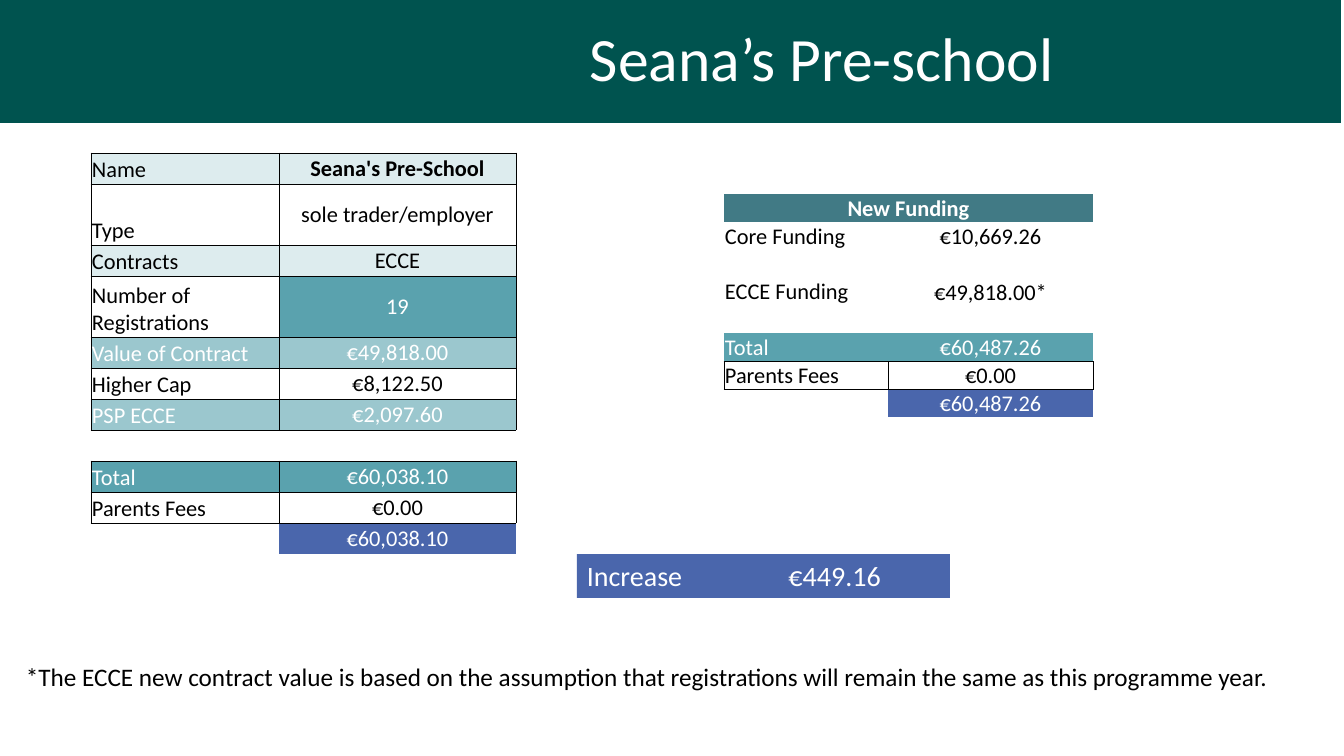
from pptx import Presentation
from pptx.dml.color import RGBColor
from pptx.enum.shapes import MSO_SHAPE
from pptx.enum.text import MSO_ANCHOR, PP_ALIGN
from pptx.oxml import parse_xml
from pptx.oxml.ns import nsdecls
from pptx.util import Pt

PX = 914400 / 100.8

BLACK = RGBColor(0x00, 0x00, 0x00)
WHITE = RGBColor(0xFF, 0xFF, 0xFF)
GREEN = RGBColor(0x00, 0x53, 0x4F)
PALE = RGBColor(0xDD, 0xEC, 0xEE)
LIGHT_TEAL = RGBColor(0x9B, 0xC7, 0xCE)
TEAL = RGBColor(0x5A, 0xA2, 0xAE)
DARK_TEAL = RGBColor(0x41, 0x7A, 0x85)
BLUE = RGBColor(0x4A, 0x66, 0xAC)

# Rows: label, value, label fill, value fill, bordered sides
CONTRACT_ROWS = [
    ("Name", "Seana's Pre-School", PALE, PALE, "LRTB"),
    ("Type", "sole trader/employer", None, None, "LRTB"),
    ("Contracts", "ECCE", PALE, PALE, "LRTB"),
    ("Number of Registrations", "19", None, TEAL, "LRTB"),
    ("Value of Contract", "€49,818.00", LIGHT_TEAL, LIGHT_TEAL, "LRTB"),
    ("Higher Cap", "€8,122.50", None, None, "LRTB"),
    ("PSP ECCE", "€2,097.60", LIGHT_TEAL, LIGHT_TEAL, "LRTB"),
    ("", "", None, None, "TB"),
    ("Total", "€60,038.10", TEAL, TEAL, "LRTB"),
    ("Parents Fees", "€0.00", None, None, "LRTB"),
    ("", "€60,038.10", None, BLUE, "T"),
]
FUNDING_ROWS = [
    ("New Funding", "", DARK_TEAL, DARK_TEAL, ""),
    ("Core Funding", "€10,669.26", None, None, ""),
    ("", "", None, None, ""),
    ("ECCE Funding", "€49,818.00*", None, None, ""),
    ("", "", None, None, ""),
    ("Total", "€60,487.26", TEAL, TEAL, "B"),
    ("Parents Fees", "€0.00", None, None, "LRTB"),
    ("", "€60,487.26", None, BLUE, "T"),
]


def px(*lengths):
    """Turn pixel lengths into EMU."""
    return [round(length * PX) for length in lengths]


def write(frame, text, size, color):
    """Put one line of text in a frame and return its paragraph."""
    frame.word_wrap = True
    paragraph = frame.paragraphs[0]
    paragraph.text = text
    paragraph.font.name = "Calibri"
    paragraph.font.size = Pt(size)
    paragraph.font.color.rgb = color
    return paragraph


prs = Presentation()
prs.slide_width, prs.slide_height = px(1344, 756)
slide = prs.slides.add_slide(prs.slide_layouts[6])
shapes = slide.shapes

# Filled bars: header band, title and increase
bars = []
for box, color in [
    ((0, 0, 306, 123), GREEN),
    ((303, 0, 1038, 123), GREEN),
    ((577, 554, 373, 44), BLUE),
]:
    bar = shapes.add_shape(MSO_SHAPE.RECTANGLE, *px(*box))
    bar.shadow.inherit = False
    bar.fill.solid()
    bar.fill.fore_color.rgb = color
    bar.line.fill.background()
    bars.append(bar)
_, title, increase = bars

heading = write(title.text_frame, "Seana’s Pre-school", 44, WHITE)
heading.alignment = PP_ALIGN.CENTER
heading.line_spacing = 0.9

increase.text_frame.vertical_anchor = MSO_ANCHOR.TOP
increase_line = write(increase.text_frame, "Increase \t€449.16", 20, WHITE)
increase_line.alignment = PP_ALIGN.LEFT
increase_line._p.get_or_add_pPr().insert(0, parse_xml(
    f'<a:tabLst {nsdecls("a")}><a:tab pos="1828800" algn="l"/></a:tabLst>'))

footnote = shapes.add_textbox(*px(16, 656, 1292, 40))
write(footnote.text_frame,
      "*The ECCE new contract value is based on the assumption that "
      "registrations will remain the same as this programme year.", 18, BLACK)

# Funding tables
tables = []
for left, top, widths, heights, rows in [
    (91, 153, (188, 237), [31, 61, 31, 61] + [31] * 7, CONTRACT_ROWS),
    (724, 194, (164, 205), [27] * 8, FUNDING_ROWS),
]:
    table = shapes.add_table(
        len(rows), 2, *px(left, top, sum(widths), sum(heights))).table
    table.first_row = table.horz_banding = False
    for column, width in zip(table.columns, px(*widths)):
        column.width = width
    for row, height in zip(table.rows, px(*heights)):
        row.height = height
    for r, (label, value, label_fill, value_fill, sides) in enumerate(rows):
        for c, (text, fill) in enumerate([(label, label_fill), (value, value_fill)]):
            cell = table.cell(r, c)
            cell.margin_left, cell.margin_right, cell.margin_top, cell.margin_bottom = px(1, 1, 1, 0)
            cell.vertical_anchor = MSO_ANCHOR.MIDDLE if c else MSO_ANCHOR.BOTTOM
            entry = write(cell.text_frame, text, 16,
                          BLACK if fill in (None, PALE) else WHITE)
            entry.alignment = PP_ALIGN.CENTER if c else PP_ALIGN.LEFT
            for side in "LRTB":
                paint = (f'<a:solidFill><a:srgbClr val="{BLACK}"/></a:solidFill>'
                         if side in sides else "<a:noFill/>")
                cell._tc.get_or_add_tcPr().append(parse_xml(
                    f'<a:ln{side} {nsdecls("a")} w="6350">{paint}</a:ln{side}>'))
            if fill is None:
                cell.fill.background()
            else:
                cell.fill.solid()
                cell.fill.fore_color.rgb = fill
    tables.append(table)

contract, funding = tables
funding.cell(0, 0).merge(funding.cell(0, 1))
for heading_cell in (contract.cell(0, 1), funding.cell(0, 0)):
    heading_cell.vertical_anchor = MSO_ANCHOR.MIDDLE
    heading_line = heading_cell.text_frame.paragraphs[0]
    heading_line.alignment = PP_ALIGN.CENTER
    heading_line.font.bold = True

prs.save("out.pptx")
